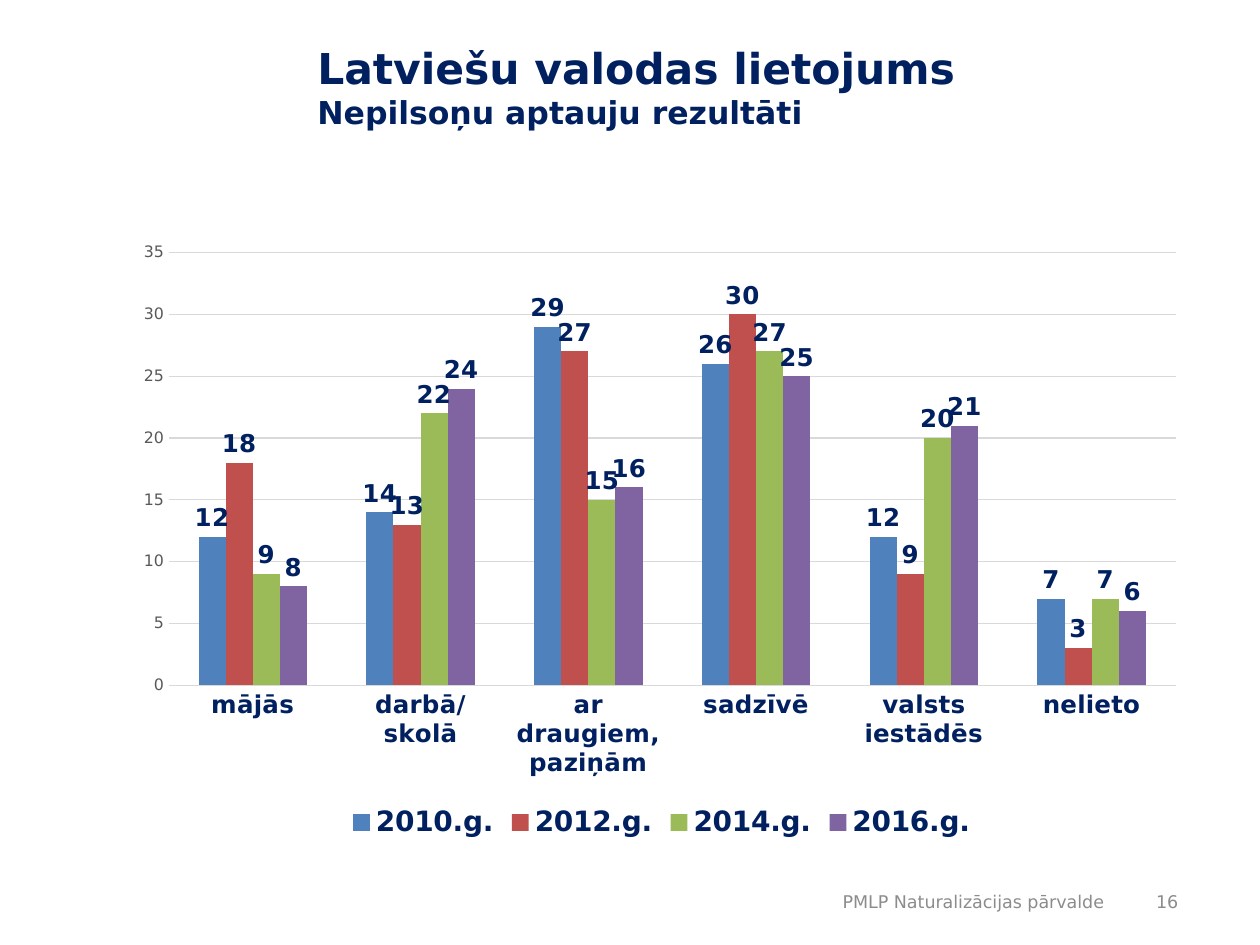
import lxml.etree
import pptx
import pptx.chart.data
import pptx.dml.color
import pptx.enum.chart
import pptx.enum.text
import pptx.oxml.ns
import pptx.util

WIDTH, HEIGHT = pptx.util.Inches(10), pptx.util.Inches(7.5)
FACE = "DejaVu Sans"
COLORS = {"navy": "002060", "footer": "8C8C8C", "axis": "595959", "grid": "D9D9D9"}
CATEGORIES = ["mājās", "darbā/skolā", "ar draugiem, paziņām", "sadzīvē",
              "valsts iestādēs", "nelieto"]
SURVEYS = {
    "2010.g.": ("4F81BD", [12, 14, 29, 26, 12, 7]),
    "2012.g.": ("C0504D", [18, 13, 27, 30, 9, 3]),
    "2014.g.": ("9BBB59", [9, 22, 15, 27, 20, 7]),
    "2016.g.": ("8064A2", [8, 24, 16, 25, 21, 6]),
}
PLOT_SHARES = {"x": 0.04, "y": 0.03, "w": 0.94, "h": 0.71}


def rgb(value):
    """Turn a hex string into a colour."""
    return pptx.dml.color.RGBColor.from_string(value)


def apply_format(target, values):
    """Set each named attribute on the target."""
    for name, value in values.items():
        setattr(target, name, value)


def style_font(font, size, color, bold=False):
    """Give a font its face, size, weight and colour."""
    apply_format(font, {"name": FACE, "size": pptx.util.Pt(size), "bold": bold})
    font.color.rgb = rgb(COLORS[color])


def share_box(left, top, width, height):
    """Convert shares of the slide into a position and size."""
    return [round(share * side) for share, side in
            zip((left, top, width, height), (WIDTH, HEIGHT) * 2)]


def add_text(slide, shares, lines, color, bold, anchor, align):
    """Add a text box with one paragraph per line and size."""
    frame = slide.shapes.add_textbox(*share_box(*shares)).text_frame
    apply_format(frame, {"word_wrap": True, "vertical_anchor": anchor})
    for index, (words, size) in enumerate(lines):
        paragraph = frame.paragraphs[0] if index == 0 else frame.add_paragraph()
        paragraph.alignment = align
        run = paragraph.add_run()
        run.text = words
        style_font(run.font, size, color, bold)


def place_plot(chart):
    """Fix the inner plot area as shares of the chart."""
    qn = pptx.oxml.ns.qn
    area = chart.element.find(".//" + qn("c:plotArea"))
    for previous in area.findall(qn("c:layout")):
        area.remove(previous)
    layout = lxml.etree.Element(qn("c:layout"))
    area.insert(0, layout)
    manual = lxml.etree.SubElement(layout, qn("c:manualLayout"))
    settings = {"layoutTarget": "inner", "xMode": "edge", "yMode": "edge", **PLOT_SHARES}
    for tag, value in settings.items():
        lxml.etree.SubElement(manual, qn("c:" + tag)).set("val", str(value))


def style_axes(chart):
    """Format the category axis, value axis and gridlines."""
    no_tick = pptx.enum.chart.XL_TICK_MARK.NONE
    categories, values = chart.category_axis, chart.value_axis
    for axis in (categories, values):
        apply_format(axis, {"major_tick_mark": no_tick, "minor_tick_mark": no_tick})
    apply_format(values, {"minimum_scale": 0, "maximum_scale": 35, "major_unit": 5,
                          "has_major_gridlines": True})
    style_font(categories.tick_labels.font, 14, "navy", True)
    style_font(values.tick_labels.font, 9, "axis")
    values.format.line.fill.background()
    for line in (categories.format.line, values.major_gridlines.format.line):
        line.color.rgb = rgb(COLORS["grid"])
        line.width = pptx.util.Pt(0.75)


def add_survey_chart(slide, shares):
    """Add the clustered columns of the survey years."""
    data = pptx.chart.data.CategoryChartData()
    data.categories = CATEGORIES
    for year, (_, answers) in SURVEYS.items():
        data.add_series(year, answers)
    kind = pptx.enum.chart.XL_CHART_TYPE.COLUMN_CLUSTERED
    chart = slide.shapes.add_chart(kind, *share_box(*shares), data).chart
    apply_format(chart, {"has_title": False, "has_legend": True})
    apply_format(chart.font, {"name": FACE, "size": pptx.util.Pt(10)})
    apply_format(chart.legend, {"position": pptx.enum.chart.XL_LEGEND_POSITION.BOTTOM,
                                "include_in_layout": False})
    style_font(chart.legend.font, 16, "navy", True)
    apply_format(chart.plots[0], {"gap_width": 219, "overlap": 0,
                                  "vary_by_categories": False})
    for series, (color, _) in zip(chart.plots[0].series, SURVEYS.values()):
        series.format.fill.solid()
        series.format.fill.fore_color.rgb = rgb(color)
        labels = series.data_labels
        apply_format(labels, {"show_value": True, "position":
                              pptx.enum.chart.XL_LABEL_POSITION.OUTSIDE_END})
        style_font(labels.font, 14, "navy", True)
    style_axes(chart)
    place_plot(chart)


def main():
    """Build and save the slide."""
    deck = pptx.Presentation()
    apply_format(deck, {"slide_width": WIDTH, "slide_height": HEIGHT})
    slide = deck.slides.add_slide(deck.slide_layouts[6])
    anchors, aligns = pptx.enum.text.MSO_ANCHOR, pptx.enum.text.PP_ALIGN
    heading = [("Latviešu valodas lietojums", 24.3), ("Nepilsoņu aptauju rezultāti", 18)]
    add_text(slide, (0.242, 0.05, 0.702, 0.095), heading, "navy", True,
             anchors.BOTTOM, aligns.LEFT)
    add_survey_chart(slide, (0.1, 0.248, 0.85, 0.645))
    footers = [("PMLP Naturalizācijas pārvalde", 0.569, 0.317), ("16", 0.898, 0.047)]
    for words, left, width in footers:
        add_text(slide, (left, 0.928, width, 0.053), [(words, 10)], "footer", False,
                 anchors.MIDDLE, aligns.RIGHT)
    deck.save("out.pptx")


if __name__ == "__main__":
    main()
